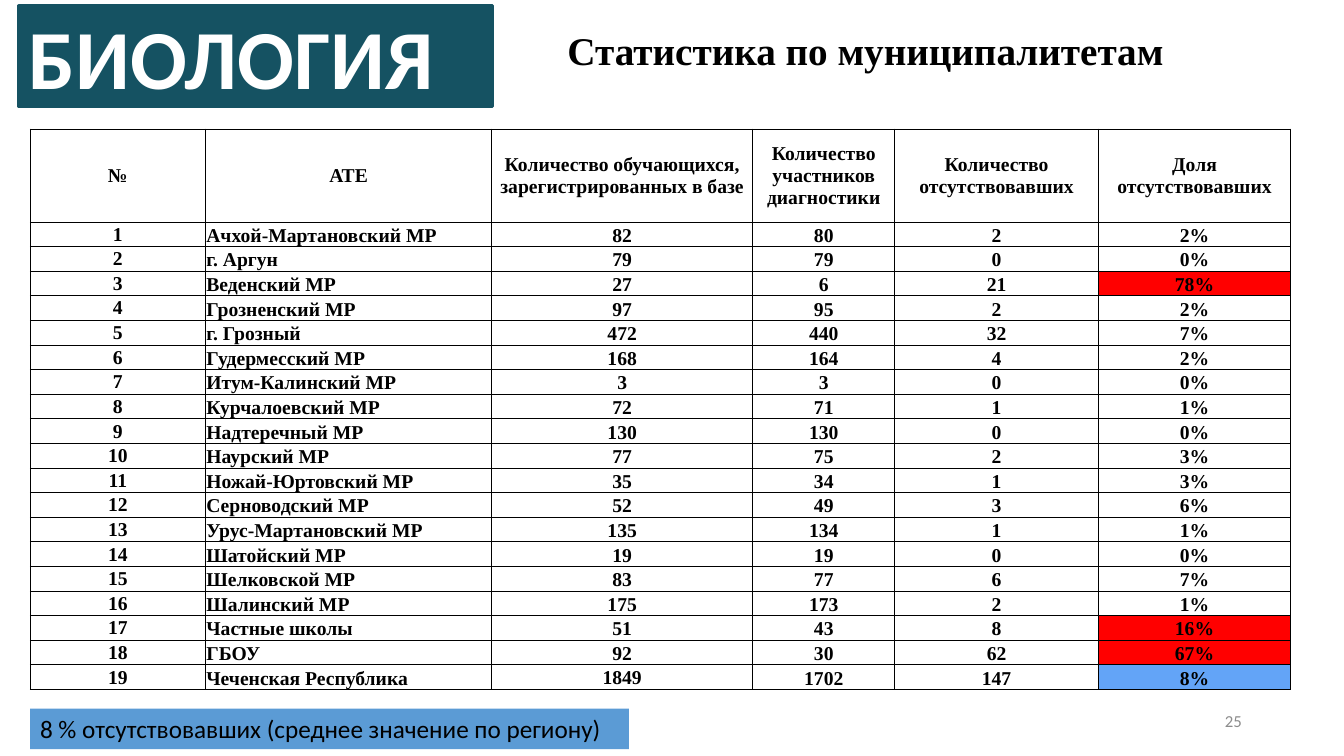
from lxml import etree
from pptx import Presentation
from pptx.dml.color import RGBColor
from pptx.enum.shapes import MSO_SHAPE
from pptx.enum.text import MSO_ANCHOR, PP_ALIGN
from pptx.oxml.ns import qn
from pptx.util import Cm, Pt

LEFT, CENTER, RIGHT = PP_ALIGN.LEFT, PP_ALIGN.CENTER, PP_ALIGN.RIGHT
TOP, MIDDLE, BOTTOM = MSO_ANCHOR.TOP, MSO_ANCHOR.MIDDLE, MSO_ANCHOR.BOTTOM
RECT = MSO_SHAPE.RECTANGLE

# Content
HEADERS = [
    "№", "АТЕ", "Количество обучающихся, зарегистрированных в базе",
    "Количество участников диагностики", "Количество отсутствовавших",
    "Доля отсутствовавших",
]
DISTRICTS = [  # name, registered, took part, absent, share absent
    ("Ачхой-Мартановский МР", 82, 80, 2, "2%"),
    ("г. Аргун", 79, 79, 0, "0%"),
    ("Веденский МР", 27, 6, 21, "78%"),
    ("Грозненский МР", 97, 95, 2, "2%"),
    ("г. Грозный", 472, 440, 32, "7%"),
    ("Гудермесский МР", 168, 164, 4, "2%"),
    ("Итум-Калинский МР", 3, 3, 0, "0%"),
    ("Курчалоевский МР", 72, 71, 1, "1%"),
    ("Надтеречный МР", 130, 130, 0, "0%"),
    ("Наурский МР", 77, 75, 2, "3%"),
    ("Ножай-Юртовский МР", 35, 34, 1, "3%"),
    ("Серноводский МР", 52, 49, 3, "6%"),
    ("Урус-Мартановский МР", 135, 134, 1, "1%"),
    ("Шатойский МР", 19, 19, 0, "0%"),
    ("Шелковской МР", 83, 77, 6, "7%"),
    ("Шалинский МР", 175, 173, 2, "1%"),
    ("Частные школы", 51, 43, 8, "16%"),
    ("ГБОУ", 92, 30, 62, "67%"),
    ("Чеченская Республика", 1849, 1702, 147, "8%"),
]
SHARE_FILLS = {"78%": "FF0000", "16%": "FF0000", "67%": "FF0000", "8%": "63A4F7"}

# Formats
SERIF, SANS = "Times New Roman", "Calibri"
TITLE_FONT = {"name": SERIF, "size": Pt(28), "bold": True}
SUBJECT_FONT = {"name": SANS, "size": Pt(60), "bold": True}
NOTE_FONT = {"name": SANS, "size": Pt(18)}
NUMBER_FONT = {"name": SANS, "size": Pt(12)}
CELL_FONT = {"name": SERIF, "size": Pt(14), "bold": True}
CELL_FORMAT = {"margin_left": Cm(0.02), "margin_right": Cm(0.02),
               "margin_top": Cm(0.02), "margin_bottom": 0}

# Layout, in centimetres
TABLE_LEFT, TABLE_TOP = 0.76, 3.25
COL_WIDTHS = [4.42, 7.21, 6.58, 3.58, 5.13, 4.85]
HEADER_HEIGHT, ROW_HEIGHT = 2.34, 0.62


def rgb(value):
    return RGBColor.from_string(value)


def write(tf, text, font, color="000000", align=LEFT):
    p = tf.paragraphs[0]
    p.alignment = align
    r = p.add_run()
    r.text = text
    for key, value in font.items():
        setattr(r.font, key, value)
    r.font.color.rgb = rgb(color)


def add_text(box, text, font, color="000000", align=LEFT, anchor=TOP):
    sp = s.shapes.add_textbox(*map(Cm, box))
    sp.text_frame.word_wrap = True
    sp.text_frame.vertical_anchor = anchor
    write(sp.text_frame, text, font, color, align)


def add_banner(box, fill, text, font, color="000000", line=None, anchor=TOP):
    sp = s.shapes.add_shape(RECT, *map(Cm, box))
    sp.shadow.inherit = False
    sp.fill.solid()
    sp.fill.fore_color.rgb = rgb(fill)
    if line:
        sp.line.color.rgb = rgb(line)
        sp.line.width = Pt(2.25)
    else:
        sp.line.fill.background()
    sp.text_frame.word_wrap = True
    sp.text_frame.vertical_anchor = anchor
    write(sp.text_frame, text, font, color)


def add_borders(cell):
    tcPr = cell._tc.get_or_add_tcPr()
    for side in ("a:lnL", "a:lnR", "a:lnT", "a:lnB"):
        ln = etree.SubElement(tcPr, qn(side), w=str(Pt(0.5)))
        fill = etree.SubElement(ln, qn("a:solidFill"))
        etree.SubElement(fill, qn("a:srgbClr"), val="000000")


prs = Presentation()
prs.slide_width, prs.slide_height = Cm(33.87), Cm(19.05)
s = prs.slides.add_slide(prs.slide_layouts[6])

# Heading, note and slide number
add_text((14.05, 0.53, 21.21, 1.45), "Статистика по муниципалитетам", TITLE_FONT)
add_banner((0.48, 0.15, 11.94, 2.54), "155262", "БИОЛОГИЯ", SUBJECT_FONT,
           "FFFFFF", line="155262", anchor=MIDDLE)
add_banner((0.76, 17.86, 15.09, 1.02), "5B9BD5",
           "8 % отсутствовавших (среднее значение по региону)", NOTE_FONT)
add_text((23.93, 17.65, 7.62, 1.02), "25", NUMBER_FONT, "8C8C8C", RIGHT, MIDDLE)

# Table
rows = [HEADERS] + [(i, *district) for i, district in enumerate(DISTRICTS, 1)]
heights = [HEADER_HEIGHT] + [ROW_HEIGHT] * len(DISTRICTS)
table = s.shapes.add_table(
    len(rows), len(HEADERS), Cm(TABLE_LEFT), Cm(TABLE_TOP),
    Cm(sum(COL_WIDTHS)), Cm(sum(heights))).table
table.first_row = table.horz_banding = False
for column, width in zip(table.columns, COL_WIDTHS):
    column.width = Cm(width)
for row, height in zip(table.rows, heights):
    row.height = Cm(height)

for i, values in enumerate(rows):
    for j, value in enumerate(values):
        cell = table.cell(i, j)
        for key, setting in CELL_FORMAT.items():
            setattr(cell, key, setting)
        is_total = i == len(DISTRICTS) and j == 2
        cell.vertical_anchor = MIDDLE if i == 0 or j == 0 or is_total else BOTTOM
        add_borders(cell)
        if value in SHARE_FILLS:
            cell.fill.solid()
            cell.fill.fore_color.rgb = rgb(SHARE_FILLS[value])
        else:
            cell.fill.background()
        write(cell.text_frame, str(value), CELL_FONT,
              align=LEFT if i and j == 1 else CENTER)

prs.save("out.pptx")
